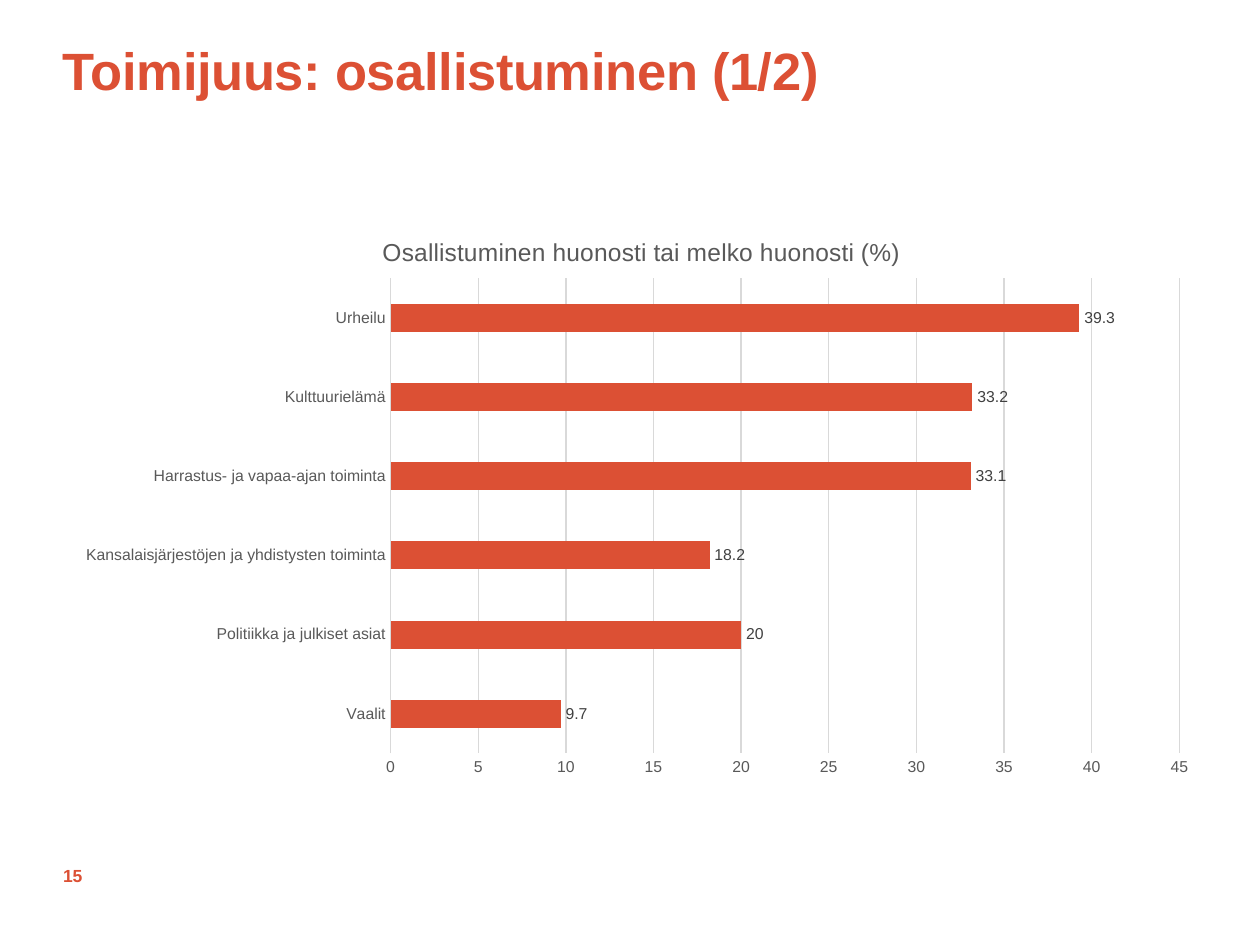
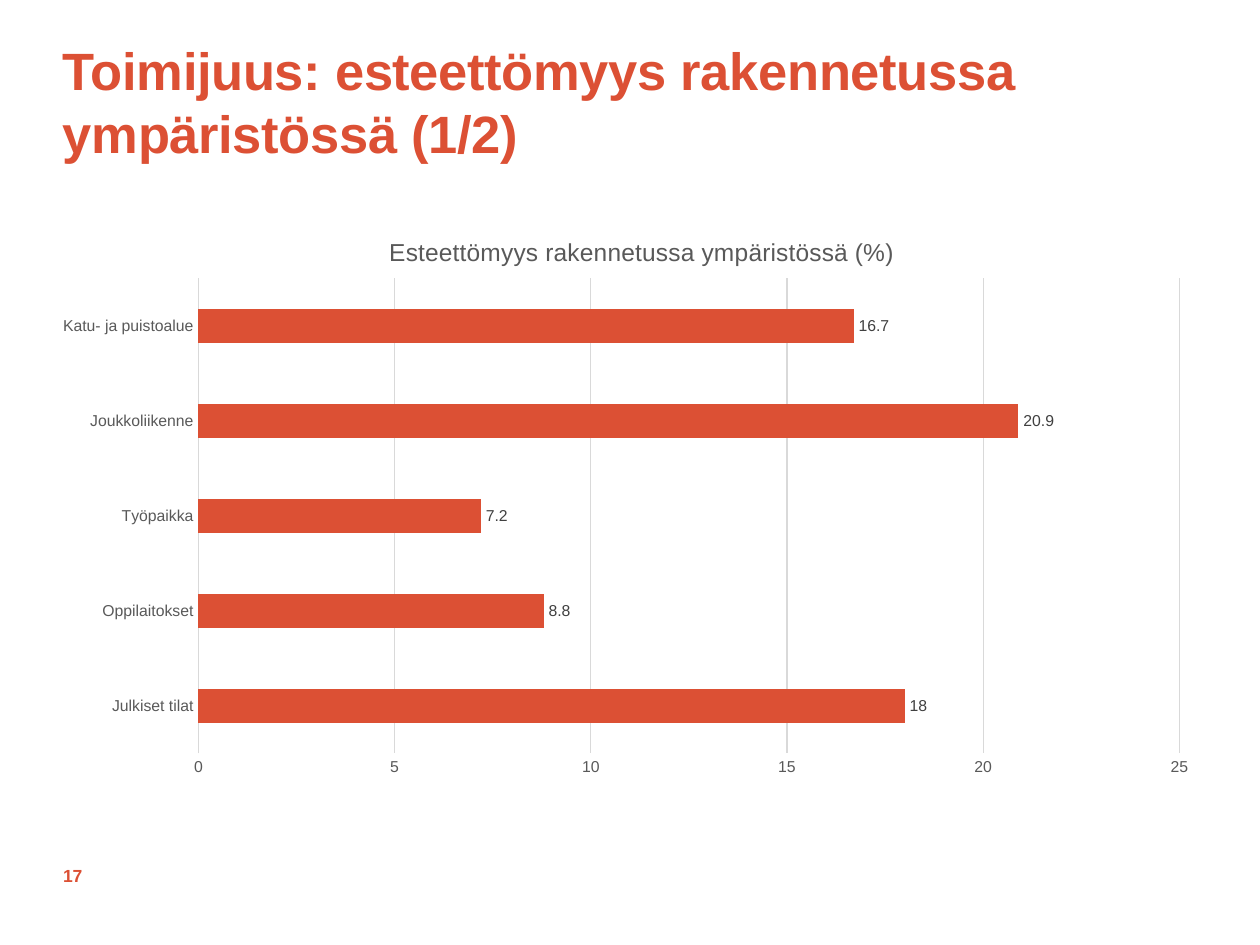
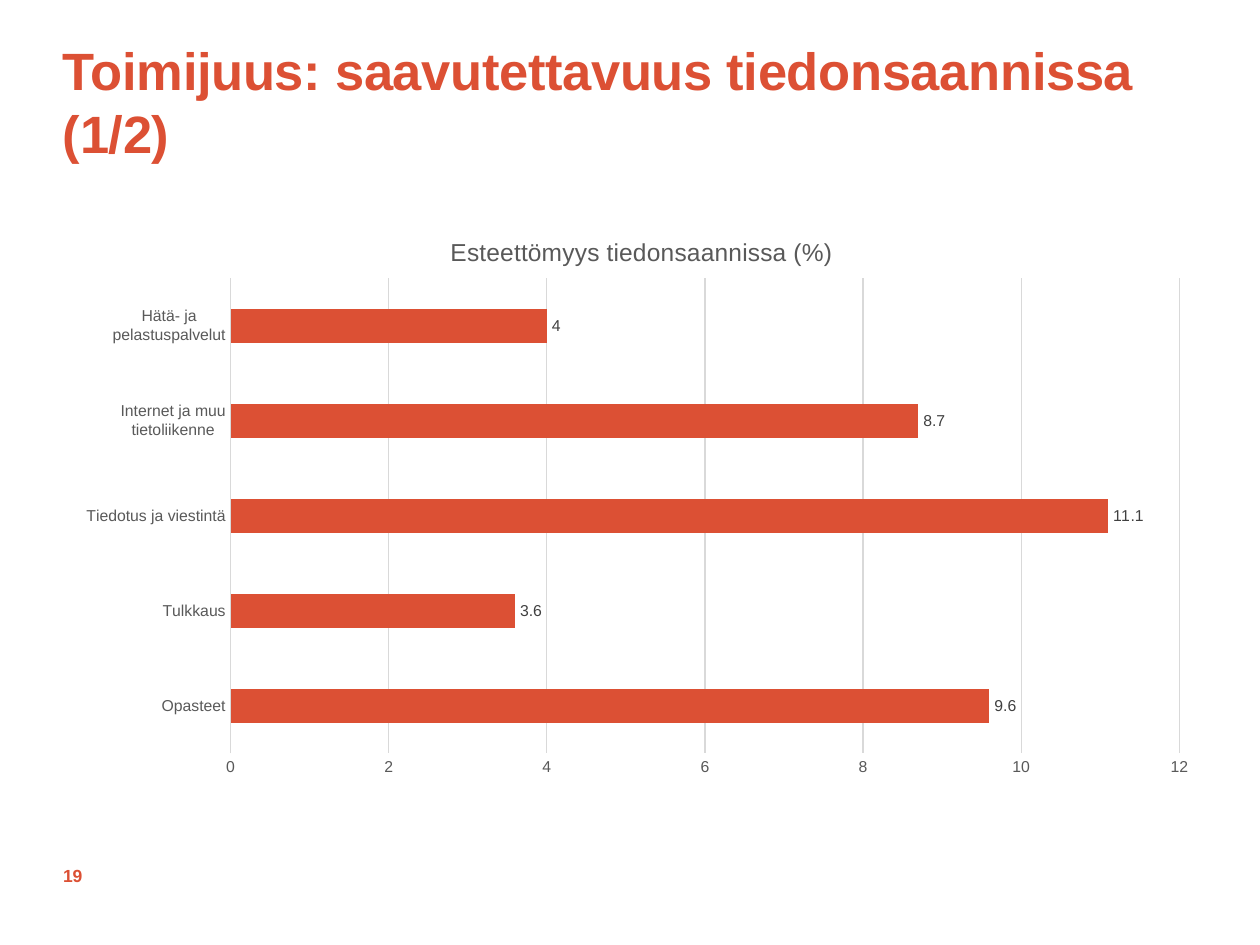
from dataclasses import dataclass

from lxml.etree import SubElement
from pptx import Presentation
from pptx.chart.data import CategoryChartData
from pptx.dml.color import RGBColor
from pptx.enum.chart import XL_CHART_TYPE, XL_LABEL_POSITION, XL_TICK_MARK
from pptx.enum.text import MSO_ANCHOR
from pptx.oxml.ns import qn
from pptx.util import Inches, Pt

ORANGE = RGBColor(0xDC, 0x50, 0x34)
TEXT_GRAY = RGBColor(0x59, 0x59, 0x59)
LABEL_GRAY = RGBColor(0x40, 0x40, 0x40)
GRID_GRAY = RGBColor(0xD9, 0xD9, 0xD9)
BLACK = RGBColor(0, 0, 0)
FONT = "Arial"

TITLE_BOX = (0.5, 0.3, 9, 1.16)
NUMBER_BOX = (0.5, 6.75, 0.71, 0.4)
CHART_BOX = (0.5, 1.64, 9.11, 4.62)
CHART_TITLE_TOP = 1.84
PLOT_TOP, PLOT_RIGHT, PLOT_BOTTOM = 2.21, 9.36, 5.98


@dataclass
class SurveySlide:
    title: str
    number: str
    chart_title: str
    chart_title_left: float
    plot_left: float
    axis_maximum: int
    axis_step: int
    shares: dict


SURVEY_SLIDES = [
    SurveySlide(
        "Toimijuus: osallistuminen (1/2)", "15",
        "Osallistuminen huonosti tai melko huonosti (%)", 3.0, 3.1, 45, 5,
        {
            "Vaalit": 9.7,
            "Politiikka ja julkiset asiat": 20,
            "Kansalaisjärjestöjen ja yhdistysten toiminta": 18.2,
            "Harrastus- ja vapaa-ajan toiminta": 33.1,
            "Kulttuurielämä": 33.2,
            "Urheilu": 39.3,
        },
    ),
    SurveySlide(
        "Toimijuus: esteettömyys rakennetussa ympäristössä (1/2)", "17",
        "Esteettömyys rakennetussa ympäristössä (%)", 3.05, 1.57, 25, 5,
        {
            "Julkiset tilat": 18,
            "Oppilaitokset": 8.8,
            "Työpaikka": 7.2,
            "Joukkoliikenne": 20.9,
            "Katu- ja puistoalue": 16.7,
        },
    ),
    SurveySlide(
        "Toimijuus: saavutettavuus tiedonsaannissa (1/2)", "19",
        "Esteettömyys tiedonsaannissa (%)", 3.54, 1.83, 12, 2,
        {
            "Opasteet": 9.6,
            "Tulkkaus": 3.6,
            "Tiedotus ja viestintä": 11.1,
            "Internet ja muu tietoliikenne": 8.7,
            "Hätä- ja pelastuspalvelut": 4,
        },
    ),
]


def style_font(font, size, color, bold=False):
    font.name = FONT
    font.size = Pt(size)
    font.bold = bold
    font.color.rgb = color


def add_text(slide, box, text, size, anchor):
    text_frame = slide.shapes.add_textbox(*map(Inches, box)).text_frame
    text_frame.word_wrap = True
    text_frame.vertical_anchor = anchor
    text_frame.margin_left = text_frame.margin_right = 0
    text_frame.margin_top = text_frame.margin_bottom = 0
    paragraph = text_frame.paragraphs[0]
    run = paragraph.add_run()
    run.text = text
    style_font(run.font, size, ORANGE, bold=True)
    return paragraph, run


def add_title(slide, box, text):
    paragraph, run = add_text(slide, box, text, 30, MSO_ANCHOR.TOP)
    paragraph.line_spacing = Pt(36)
    run.font._element.set("spc", "-20")


def set_layout(parent, index, settings):
    for old_layout in parent.findall(qn("c:layout")):
        parent.remove(old_layout)
    layout = parent.makeelement(qn("c:layout"))
    parent.insert(index, layout)
    manual_layout = SubElement(layout, qn("c:manualLayout"))
    for name, value in settings.items():
        SubElement(manual_layout, qn(f"c:{name}")).set("val", str(value))


def edge_position(box, left, top):
    return {
        "xMode": "edge",
        "yMode": "edge",
        "x": round((left - box[0]) / box[2], 4),
        "y": round((top - box[1]) / box[3], 4),
    }


def style_axes(chart, survey):
    for axis in (chart.category_axis, chart.value_axis):
        axis.major_tick_mark = XL_TICK_MARK.NONE
        axis.minor_tick_mark = XL_TICK_MARK.NONE
        style_font(axis.tick_labels.font, 9, TEXT_GRAY)
    value_axis = chart.value_axis
    value_axis.minimum_scale = 0
    value_axis.maximum_scale = survey.axis_maximum
    value_axis.major_unit = survey.axis_step
    value_axis.has_major_gridlines = True
    value_axis.format.line.fill.background()
    for line in (chart.category_axis.format.line, value_axis.major_gridlines.format.line):
        line.color.rgb = GRID_GRAY
        line.width = Pt(0.75)


def style_bars(plot):
    plot.gap_width = 182
    plot.vary_by_categories = False
    series = plot.series[0]
    series.format.fill.solid()
    series.format.fill.fore_color.rgb = ORANGE
    labels = series.data_labels
    labels.show_value = True
    labels.position = XL_LABEL_POSITION.OUTSIDE_END
    style_font(labels.font, 9, LABEL_GRAY)


def add_chart_title(chart, box, survey):
    chart.has_title = True
    chart_title = chart.chart_title
    chart_title.include_in_layout = False
    run = chart_title.text_frame.paragraphs[0].add_run()
    run.text = survey.chart_title
    style_font(run.font, 14, TEXT_GRAY)
    position = edge_position(box, survey.chart_title_left, CHART_TITLE_TOP)
    set_layout(chart_title._element, 1, position)


def add_bar_chart(slide, box, survey):
    chart_data = CategoryChartData()
    chart_data.categories = list(survey.shares)
    chart_data.add_series("Series 1", list(survey.shares.values()))
    chart = slide.shapes.add_chart(
        XL_CHART_TYPE.BAR_CLUSTERED, *map(Inches, box), chart_data
    ).chart
    chart.has_legend = False
    style_font(chart.font, 10, BLACK)
    add_chart_title(chart, box, survey)
    style_axes(chart, survey)
    style_bars(chart.plots[0])
    plot_layout = {
        "layoutTarget": "inner",
        **edge_position(box, survey.plot_left, PLOT_TOP),
        "w": round((PLOT_RIGHT - survey.plot_left) / box[2], 4),
        "h": round((PLOT_BOTTOM - PLOT_TOP) / box[3], 4),
    }
    plot_area = chart._chartSpace.find(f".//{qn('c:plotArea')}")
    set_layout(plot_area, 0, plot_layout)


def add_survey_slide(presentation, survey):
    slide = presentation.slides.add_slide(presentation.slide_layouts[6])
    add_title(slide, TITLE_BOX, survey.title)
    add_text(slide, NUMBER_BOX, survey.number, 10, MSO_ANCHOR.MIDDLE)
    add_bar_chart(slide, CHART_BOX, survey)


def main():
    presentation = Presentation()
    presentation.slide_width = Inches(10)
    presentation.slide_height = Inches(7.5)
    for survey in SURVEY_SLIDES:
        add_survey_slide(presentation, survey)
    presentation.save("out.pptx")


if __name__ == "__main__":
    main()
